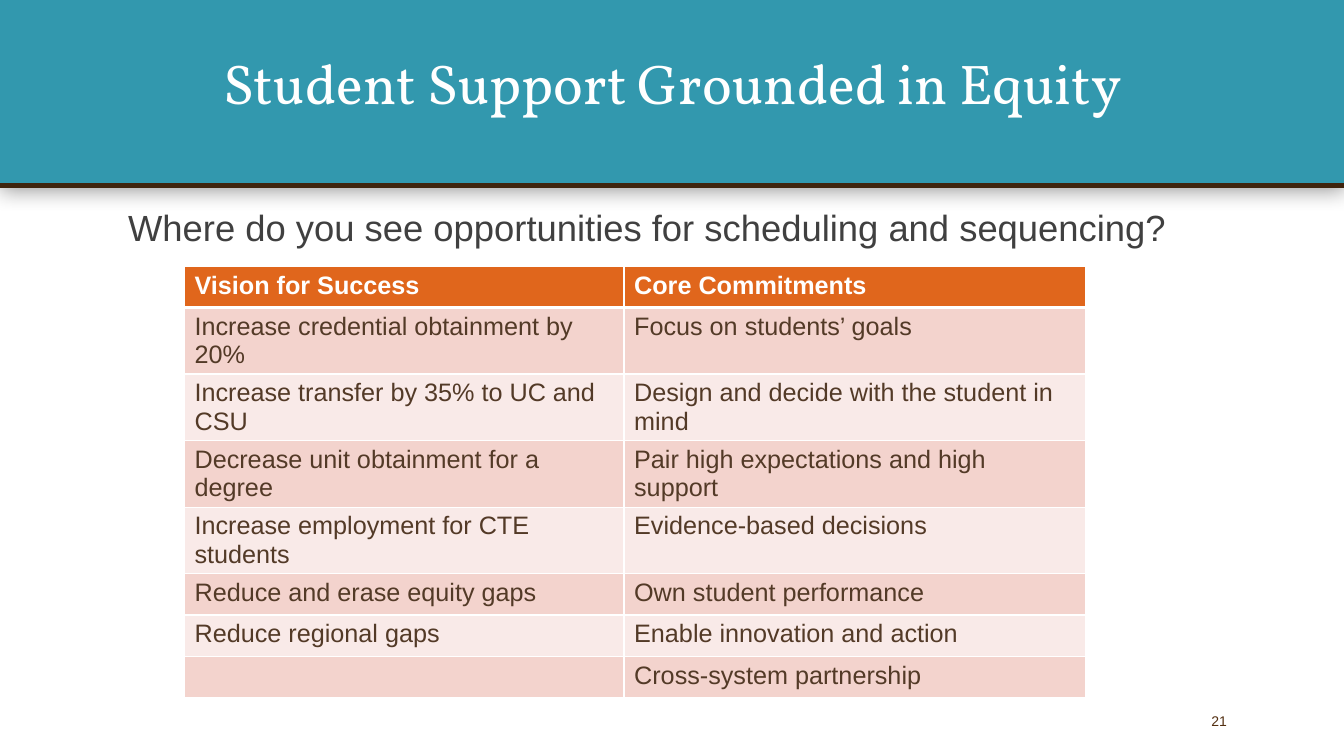
from lxml import etree
from pptx import Presentation
from pptx.dml.color import RGBColor
from pptx.enum.shapes import MSO_CONNECTOR as CONN, MSO_SHAPE as SHAPE
from pptx.enum.text import MSO_ANCHOR as ANCHOR, MSO_AUTO_SIZE as AUTO, PP_ALIGN as ALIGN
from pptx.oxml import parse_xml
from pptx.oxml.ns import nsdecls, qn
from pptx.util import Inches, Pt

WHITE = RGBColor(0xFF, 0xFF, 0xFF)
TEAL = RGBColor(0x32, 0x98, 0xAE)
DARK_BROWN = RGBColor(0x3F, 0x24, 0x0D)
BROWN = RGBColor(0x53, 0x2F, 0x11)
CELL_BROWN = RGBColor(0x53, 0x3A, 0x27)
GRAY = RGBColor(0x40, 0x40, 0x40)
ORANGE = RGBColor(0xE0, 0x66, 0x1C)
PINK = RGBColor(0xF3, 0xD3, 0xCD)
PALE_PINK = RGBColor(0xF9, 0xEA, 0xE8)

SLIDE_W, SLIDE_H, BAND_H = 13.33, 7.5, 1.84
COL_WIDTHS = (4.36, 4.58)
ROW_H = 0.41

ROWS = [
    ("Vision for Success", "Core Commitments"),
    ("Increase credential obtainment by 20%", "Focus on students’ goals"),
    ("Increase transfer by 35% to UC and CSU", "Design and decide with the student in mind"),
    ("Decrease unit obtainment for a degree", "Pair high expectations and high support"),
    ("Increase employment for CTE students", "Evidence-based decisions"),
    ("Reduce and erase equity gaps", "Own student performance"),
    ("Reduce regional gaps", "Enable innovation and action"),
    ("", "Cross-system partnership"),
]


def write(tf, text, size, color, font="Arial", bold=False, **para):
    p = tf.paragraphs[0]
    for name, value in para.items():
        setattr(p, name, value)
    if text:
        r = p.add_run()
        r.text = text
        for name, value in {"size": Pt(size), "name": font, "bold": bold}.items():
            setattr(r.font, name, value)
        r.font.color.rgb = color
    return p


def place(sp, left, top, width, height, anchor):
    sp.left, sp.top, sp.width, sp.height = map(Inches, (left, top, width, height))
    tf = sp.text_frame
    frame = {"word_wrap": True, "auto_size": AUTO.NONE, "vertical_anchor": anchor}
    for name, value in frame.items():
        setattr(tf, name, value)
    return tf


def add_band(s):
    band = s.shapes.add_shape(SHAPE.RECTANGLE, 0, 0, Inches(SLIDE_W), Inches(BAND_H))
    band.fill.solid()
    band.fill.fore_color.rgb = TEAL
    band.line.fill.background()
    band._element.spPr.append(parse_xml(
        f'<a:effectLst {nsdecls("a")}>'
        f'<a:outerShdw blurRad="{Pt(15)}" dist="{Pt(3)}" dir="5400000" algn="t" rotWithShape="0">'
        '<a:srgbClr val="000000"><a:alpha val="40000"/></a:srgbClr>'
        '</a:outerShdw></a:effectLst>'))
    rule = s.shapes.add_connector(
        CONN.STRAIGHT, Inches(SLIDE_W), Inches(BAND_H), 0, Inches(BAND_H))
    rule.line.color.rgb = DARK_BROWN
    rule.line.width = Pt(3)
    etree.SubElement(rule._element.spPr, qn("a:effectLst"))
    # Send band and rule behind the placeholders
    for i, sp in enumerate((band, rule)):
        s.shapes._spTree.insert(2 + i, sp._element)


def set_borders(cell, top, bottom):
    widths = {"lnL": 1, "lnR": 1, "lnT": top, "lnB": bottom}
    tcPr = cell._tc.get_or_add_tcPr()
    for i, (side, width) in enumerate(widths.items()):
        tcPr.insert(i, parse_xml(
            f'<a:{side} {nsdecls("a")} w="{Pt(width)}"><a:solidFill>'
            f'<a:srgbClr val="{WHITE}"/></a:solidFill></a:{side}>'))


def add_goals_table(s):
    table = s.shapes.add_table(
        len(ROWS), len(COL_WIDTHS), Inches(1.83), Inches(2.64),
        Inches(sum(COL_WIDTHS)), Inches(ROW_H * len(ROWS))).table
    for col, width in zip(table.columns, COL_WIDTHS):
        col.width = Inches(width)
    for i, texts in enumerate(ROWS):
        table.rows[i].height = Inches(ROW_H)
        header = i == 0
        fill = ORANGE if header else (PALE_PINK, PINK)[i % 2]
        for j, text in enumerate(texts):
            cell = table.cell(i, j)
            cell.fill.solid()
            cell.fill.fore_color.rgb = fill
            set_borders(cell, top=3 if i == 1 else 1, bottom=3 if header else 1)
            write(cell.text_frame, text, 18, WHITE if header else CELL_BROWN, bold=header)


def main():
    prs = Presentation()
    prs.slide_width, prs.slide_height = Inches(SLIDE_W), Inches(SLIDE_H)
    s = prs.slides.add_slide(prs.slide_layouts[1])

    # Title band
    add_band(s)
    tf = place(s.shapes.title, 1.17, 0.17, 11, 1.38, ANCHOR.MIDDLE)
    write(tf, "Student Support Grounded in Equity", 40, WHITE, "Vollkorn",
          alignment=ALIGN.CENTER, line_spacing=0.9)

    # Question
    tf = place(s.placeholders[1], 1.17, 2.03, 11, 4.29, ANCHOR.TOP)
    p = write(tf, "Where do you see opportunities for scheduling and sequencing?", 26, GRAY,
              line_spacing=0.9, space_before=Pt(10))
    pPr = p._p.get_or_add_pPr()
    pPr.set("marL", "0")
    pPr.set("indent", "0")
    etree.SubElement(pPr, qn("a:buNone"))

    # Goals and commitments
    add_goals_table(s)

    # Page number
    number = s.shapes.add_textbox(0, 0, 0, 0)
    tf = place(number, 9.17, 6.95, 3, 0.4, ANCHOR.MIDDLE)
    tf.margin_right = 0
    write(tf, "21", 10, BROWN, alignment=ALIGN.RIGHT)

    prs.save("out.pptx")


if __name__ == "__main__":
    main()
